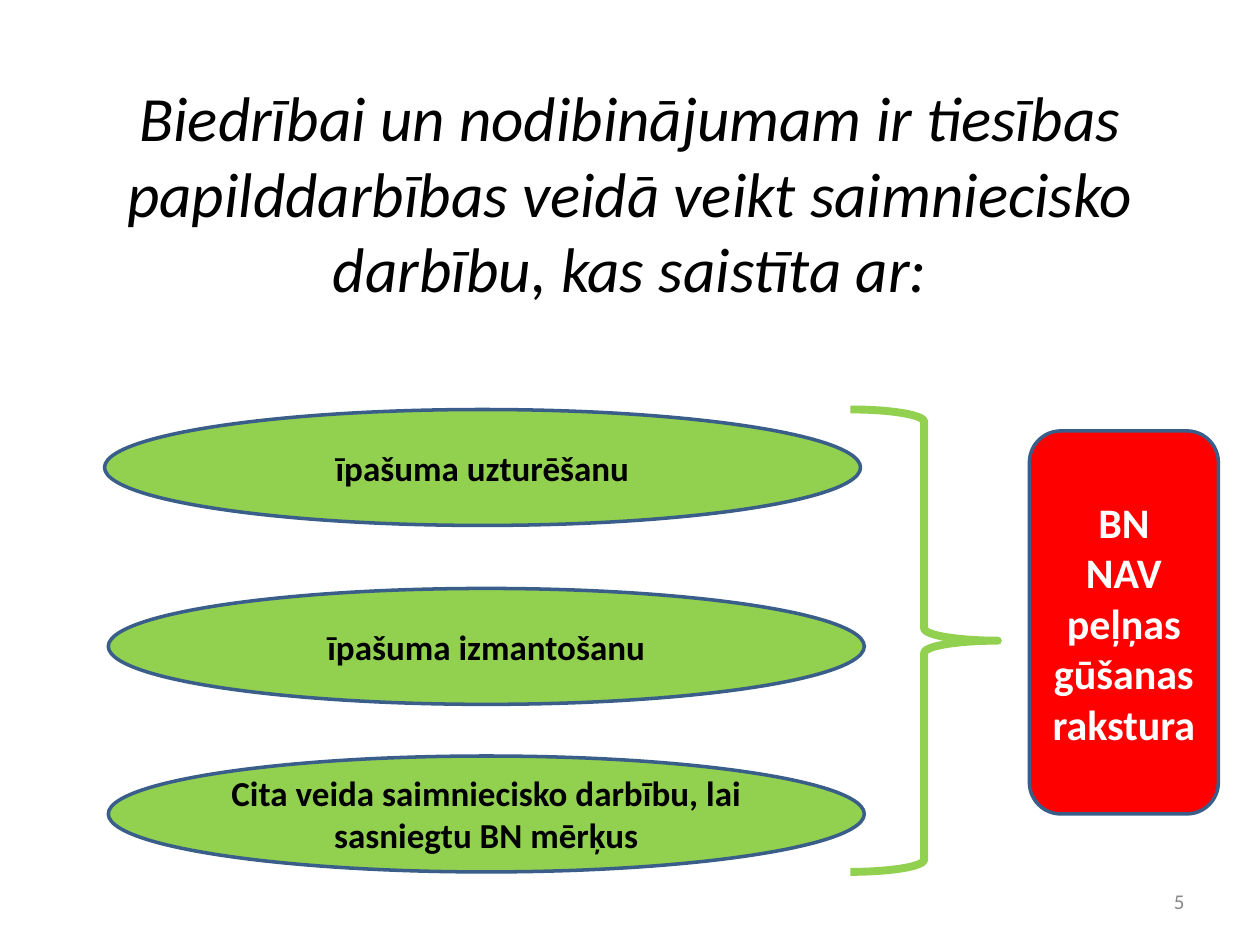
from pptx import Presentation
from pptx.dml.color import RGBColor
from pptx.enum.shapes import MSO_SHAPE
from pptx.enum.text import MSO_ANCHOR, PP_ALIGN
from pptx.util import Inches, Pt

OVAL = MSO_SHAPE.OVAL
BRACE = MSO_SHAPE.RIGHT_BRACE
ROUND = MSO_SHAPE.ROUNDED_RECTANGLE
MIDDLE = MSO_ANCHOR.MIDDLE
CENTER = PP_ALIGN.CENTER
RIGHT = PP_ALIGN.RIGHT

BLACK = RGBColor(0x00, 0x00, 0x00)
WHITE = RGBColor(0xFF, 0xFF, 0xFF)
GRAY = RGBColor(0x88, 0x88, 0x88)
GREEN = RGBColor(0x92, 0xD0, 0x50)
RED = RGBColor(0xFF, 0x00, 0x00)
BLUE = RGBColor(0x39, 0x5E, 0x89)


def write(shape, text, size, color, align=CENTER, bold=False, italic=False):
    frame = shape.text_frame
    frame.text = text
    frame.word_wrap = True
    frame.vertical_anchor = MIDDLE
    for para in frame.paragraphs:
        para.alignment = align
        for run in para.runs:
            font = run.font
            font.name = "Calibri"
            font.size = Pt(size)
            font.color.rgb = color
            font.bold = bold
            font.italic = italic


def draw(kind, left, top, width, height, fill, line, weight):
    """Add a preset shape without shadow; fill None leaves it hollow."""
    shape = slide.shapes.add_shape(
        kind, Inches(left), Inches(top), Inches(width), Inches(height))
    shape.shadow.inherit = False
    if fill is None:
        shape.fill.background()
    else:
        shape.fill.solid()
        shape.fill.fore_color.rgb = fill
    shape.line.color.rgb = line
    shape.line.width = Pt(weight)
    return shape


deck = Presentation()
deck.slide_width = Inches(10)
deck.slide_height = Inches(7.5)
slide = deck.slides.add_slide(deck.slide_layouts[5])

title = slide.shapes.title
title.left, title.top = Inches(0.5), Inches(0.3)
title.width, title.height = Inches(9), Inches(2.45)
write(title, "Biedrībai un nodibinājumam ir tiesības papilddarbības veidā "
      "veikt saimniecisko darbību, kas saistīta ar:", 36, BLACK, italic=True)

goals = [
    (0.83, 3.25, "īpašuma uzturēšanu"),
    (0.86, 4.67, "īpašuma izmantošanu"),
    (0.86, 6, "Cita veida saimniecisko darbību, lai sasniegtu BN mērķus"),
]
for left, top, text in goals:
    oval = draw(OVAL, left, top, 6, 0.92, GREEN, BLUE, 2)
    write(oval, text, 20, BLACK, bold=True)

draw(BRACE, 6.75, 3.25, 1.17, 3.67, None, GREEN, 4.5)

result = draw(ROUND, 8.17, 3.42, 1.5, 3.04, RED, BLUE, 2)
write(result, "BN\nNAV peļņas gūšanas rakstura", 24, WHITE, bold=True)

number = slide.shapes.add_textbox(
    Inches(7.17), Inches(6.95), Inches(2.33), Inches(0.4))
write(number, "5", 12, GRAY, align=RIGHT)

deck.save("out.pptx")
